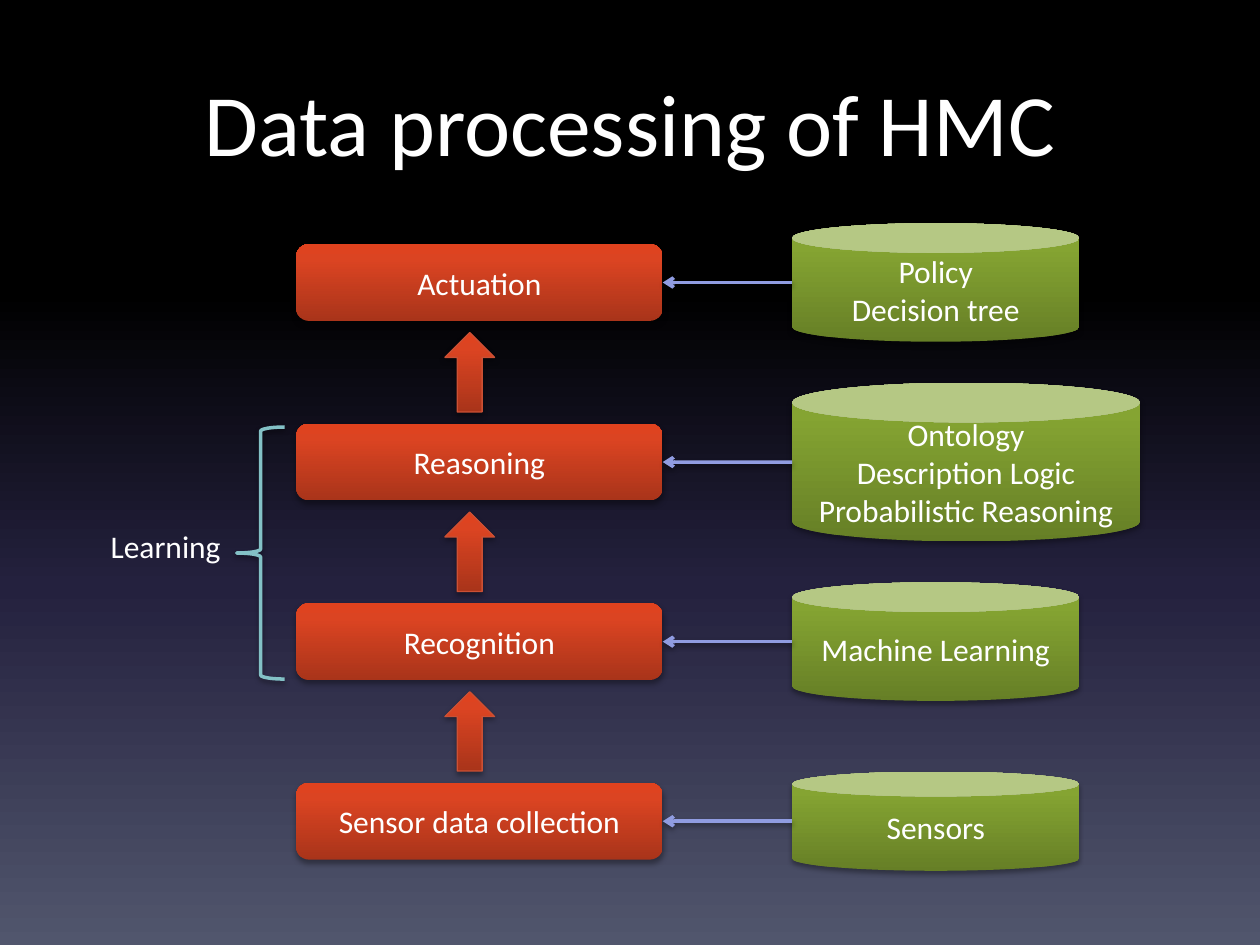
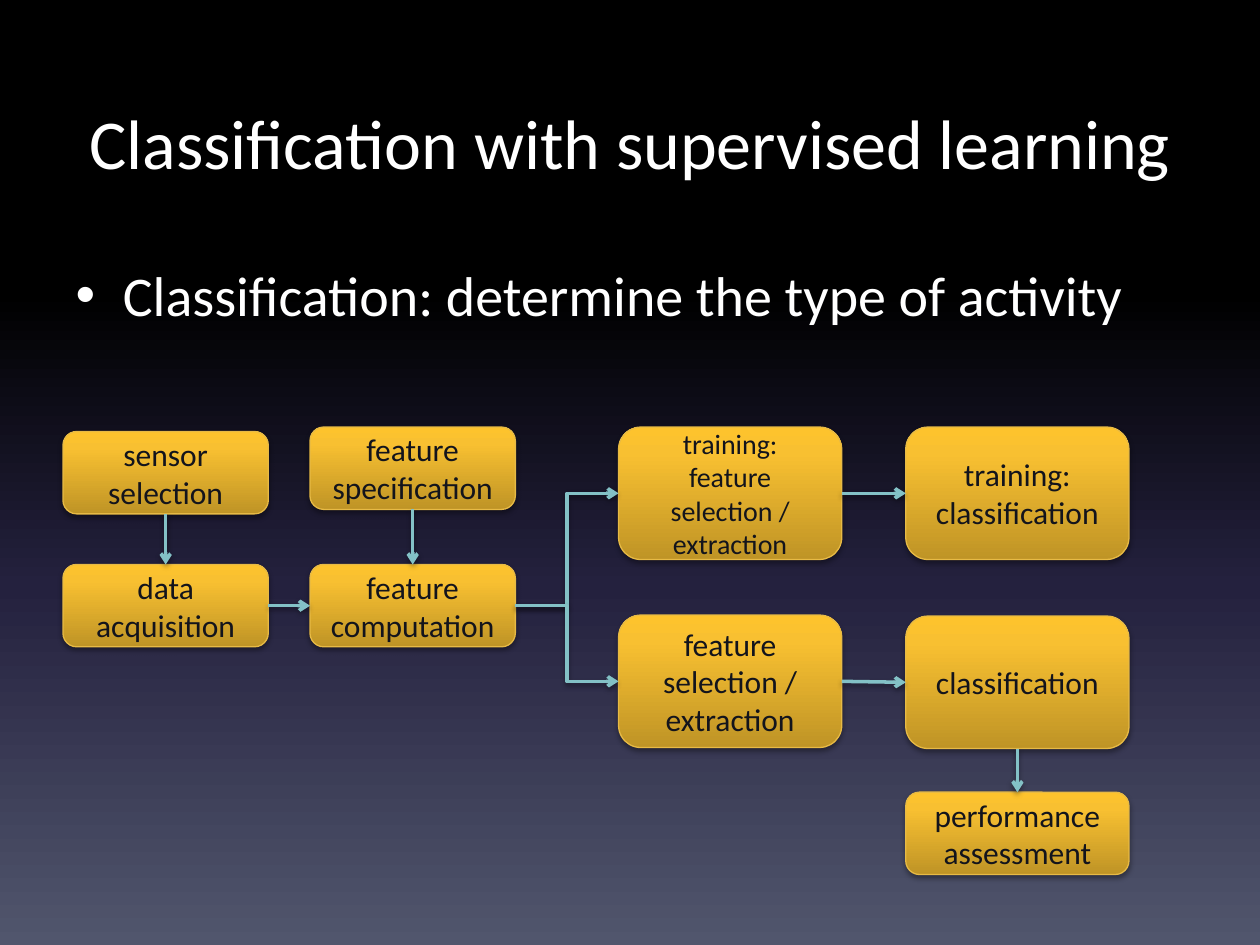
"""Build two slides: data processing of HMC and classification with supervised learning."""
from pptx import Presentation
from pptx.dml.color import RGBColor
from pptx.enum.shapes import MSO_CONNECTOR, MSO_SHAPE
from pptx.enum.text import MSO_ANCHOR, MSO_AUTO_SIZE, PP_ALIGN
from pptx.oxml import parse_xml
from pptx.oxml.ns import nsdecls
from pptx.util import Cm, Pt

STRAIGHT, ELBOW = MSO_CONNECTOR.STRAIGHT, MSO_CONNECTOR.ELBOW
ROUNDED, CAN = MSO_SHAPE.ROUNDED_RECTANGLE, MSO_SHAPE.CAN
UP_ARROW, LEFT_BRACE = MSO_SHAPE.UP_ARROW, MSO_SHAPE.LEFT_BRACE
ANCHOR_TOP, ANCHOR_MIDDLE = MSO_ANCHOR.TOP, MSO_ANCHOR.MIDDLE
LEFT_ALIGN, CENTER = PP_ALIGN.LEFT, PP_ALIGN.CENTER
NO_FIT, FIT_SHAPE = MSO_AUTO_SIZE.NONE, MSO_AUTO_SIZE.SHAPE_TO_FIT_TEXT
TOP, LEFT, BOTTOM, RIGHT = range(4)
TITLE_AND_CONTENT, TITLE_ONLY = 1, 5

FONT = "Calibri"
COLORS = {"white": "FFFFFF", "dark": "13141C", "red_line": "CB5034",
          "yellow_line": "E7BA45", "blue": "909CE1", "teal": "83C1C6"}
GRADIENTS = {
    "night": [(0, "000000"), (31, "000000"), (62, "24213E"), (100, "51566D")],
    "red": [(0, "A9341A"), (80, "DB4422"), (100, "E0421E")],
    "green": [(0, "667F26"), (80, "85A432"), (100, "87A730")],
    "yellow": [(0, "BF9426"), (80, "F8C031"), (100, "FDC32D")],
}


def rgb(name):
    """Return a palette colour."""
    return RGBColor.from_string(COLORS[name])


def set_gradient(owner, fill, name, angle):
    """Give a shape or background a linear gradient."""
    fill.gradient()
    fill.gradient_angle = angle
    stops = owner.element.xpath(".//a:gsLst")[0]
    for stop in list(stops):
        stops.remove(stop)
    for pos, color in GRADIENTS[name]:
        stops.append(parse_xml(
            f'<a:gs {nsdecls("a")} pos="{pos * 1000}"><a:srgbClr val="{color}"/></a:gs>'))


def add_shadow(sp, dist=1.8, alpha=35):
    """Put a soft shadow below a shape or connector."""
    sp.element.spPr.append(parse_xml(
        f'<a:effectLst {nsdecls("a")}><a:outerShdw blurRad="{Pt(3.1)}" dist="{Pt(dist)}" '
        f'dir="5400000" rotWithShape="0"><a:srgbClr val="000000">'
        f'<a:alpha val="{alpha * 1000}"/></a:srgbClr></a:outerShdw></a:effectLst>'))


def set_line(sp, color, width):
    """Set the outline colour and width."""
    sp.line.color.rgb = rgb(color)
    sp.line.width = Pt(width)


def write(tf, text, size=18, color="white", align=CENTER, anchor=ANCHOR_MIDDLE,
          fit=NO_FIT, wrap=True, spacing=None, before=None):
    """Fill a text frame, one paragraph per line of text."""
    tf.auto_size = fit
    tf.word_wrap = wrap
    tf.vertical_anchor = anchor
    for i, line in enumerate(text.split("\n")):
        p = tf.add_paragraph() if i else tf.paragraphs[0]
        p.alignment = align
        p.line_spacing = spacing
        p.space_before = before
        r = p.add_run()
        r.text = line
        r.font.name, r.font.size = FONT, Pt(size)
        r.font.color.rgb = rgb(color)


def place(sp, x, y, w, h):
    """Position an existing shape in centimetres."""
    sp.left, sp.top, sp.width, sp.height = Cm(x), Cm(y), Cm(w), Cm(h)


def add_titled_slide(prs, layout, title, size, anchor):
    """Add a slide and format its title."""
    s = prs.slides.add_slide(prs.slide_layouts[layout])
    place(s.shapes.title, 1.27, 1.27, 22.86, 3.18)
    write(s.shapes.title.text_frame, title, size=size, anchor=anchor)
    return s


def add_block(s, kind, box, gradient, text="", line=None, **fmt):
    """Add a gradient shape with a shadow and optional text."""
    sp = s.shapes.add_shape(kind, *map(Cm, box))
    set_gradient(sp, sp.fill, gradient, 90)
    if line:
        set_line(sp, line, 0.75)
    else:
        sp.line.fill.background()
    add_shadow(sp)
    if text:
        write(sp.text_frame, text, **fmt)
    return sp


def add_arrow(s, start, end, color, kind=STRAIGHT):
    """Connect two (shape, side) ends; a plain (x, y) start stays free."""
    free = isinstance(start[0], (int, float))
    x, y = map(Cm, start) if free else (0, 0)
    c = s.shapes.add_connector(kind, x, y, 0, 0)
    if not free:
        c.begin_connect(*start)
    c.end_connect(*end)
    set_line(c, color, 2)
    c.element.xpath(".//a:ln")[0].append(
        parse_xml(f'<a:tailEnd {nsdecls("a")} type="arrow"/>'))
    add_shadow(c, dist=1.6, alpha=38)


def add_learning_brace(s):
    """Add the brace that spans the learning stages, with its label."""
    label = s.shapes.add_textbox(Cm(1.98), Cm(10.49), Cm(2.87), Cm(1.02))
    write(label.text_frame, "Learning", align=LEFT_ALIGN, anchor=ANCHOR_TOP,
          fit=FIT_SHAPE, wrap=False)
    brace = s.shapes.add_shape(LEFT_BRACE, Cm(4.77), Cm(8.61), Cm(0.97), Cm(5.08))
    brace.fill.background()
    set_line(brace, "teal", 2)
    add_shadow(brace, dist=1.6, alpha=38)


def build_processing(prs):
    """Build the stack of processing stages and their methods."""
    s = add_titled_slide(prs, TITLE_ONLY, "Data processing of HMC", 50, ANCHOR_TOP)
    stage_x, stage_w, stage_h = 5.97, 7.39, 1.55
    first_y, step, arrow_h, can_x = 4.92, 3.62, 1.6, 15.97
    stages = [
        ("Actuation", "Policy\nDecision tree", 5.79, 2.39),
        ("Reasoning", "Ontology\nDescription Logic\nProbabilistic Reasoning", 7.01, 3.2),
        ("Recognition", "Machine Learning", 5.79, 2.39),
        ("Sensor data collection", "Sensors", 5.79, 2.0),
    ]
    for i, (stage, methods, can_w, can_h) in enumerate(stages):
        y = first_y + i * step
        middle = y + stage_h / 2
        sp = add_block(s, ROUNDED, (stage_x, y, stage_w, stage_h), "red", stage)
        add_block(s, CAN, (can_x, middle - can_h / 2, can_w, can_h), "green", methods)
        add_arrow(s, (can_x, middle), (sp, RIGHT), "blue")
        if i:
            arrow_y = y - (step - stage_h + arrow_h) / 2
            add_block(s, UP_ARROW, (8.97, arrow_y, 1, arrow_h), "red", line="red_line")
    add_learning_brace(s)


def build_classification(prs):
    """Build the supervised learning flow."""
    s = add_titled_slide(prs, TITLE_AND_CONTENT, "Classification with supervised learning",
                         40, ANCHOR_MIDDLE)
    body = s.placeholders[1]
    place(body, 1.27, 4.45, 22.86, 4.27)
    write(body.text_frame, "Classification: determine the type of activity", size=32,
          align=LEFT_ALIGN, anchor=ANCHOR_TOP, spacing=1.5, before=Pt(6.4))

    columns = [(1.27, 4.14), (6.25, 4.14), (12.47, 4.5), (18.26, 4.5)]
    low, high = 1.66, 2.67
    steps = {
        "sensor": (0, 8.7, low, "sensor\nselection", 18),
        "data": (0, 11.38, low, "data acquisition", 18),
        "specification": (1, 8.61, low, "feature specification", 18),
        "computation": (1, 11.38, low, "feature computation", 18),
        "train_select": (2, 8.61, high, "training:\nfeature selection / extraction", 16),
        "select": (2, 12.4, high, "feature selection / extraction", 18),
        "train_classify": (3, 8.61, high, "training:\nclassification", 18),
        "classify": (3, 12.42, high, "classification", 18),
        "assess": (3, 15.97, low, "performance\nassessment", 18),
    }
    blocks = {}
    for key, (column, y, h, text, size) in steps.items():
        x, w = columns[column]
        blocks[key] = add_block(s, ROUNDED, (x, y, w, h), "yellow", text,
                                line="yellow_line", size=size, color="dark")

    down, across = (BOTTOM, TOP, STRAIGHT), (RIGHT, LEFT, STRAIGHT)
    branch = (RIGHT, LEFT, ELBOW)
    flows = [
        ("sensor", "data", down), ("specification", "computation", down),
        ("data", "computation", across), ("computation", "train_select", branch),
        ("computation", "select", branch), ("train_select", "train_classify", across),
        ("select", "classify", across), ("classify", "assess", down),
    ]
    for a, b, (out_side, in_side, kind) in flows:
        add_arrow(s, (blocks[a], out_side), (blocks[b], in_side), "teal", kind)


def main():
    """Create and save the presentation."""
    prs = Presentation()
    prs.slide_width, prs.slide_height = Cm(25.4), Cm(19.05)
    master = prs.slide_master
    set_gradient(master, master.background.fill, "night", 270)
    build_processing(prs)
    build_classification(prs)
    prs.save("out.pptx")


if __name__ == "__main__":
    main()
